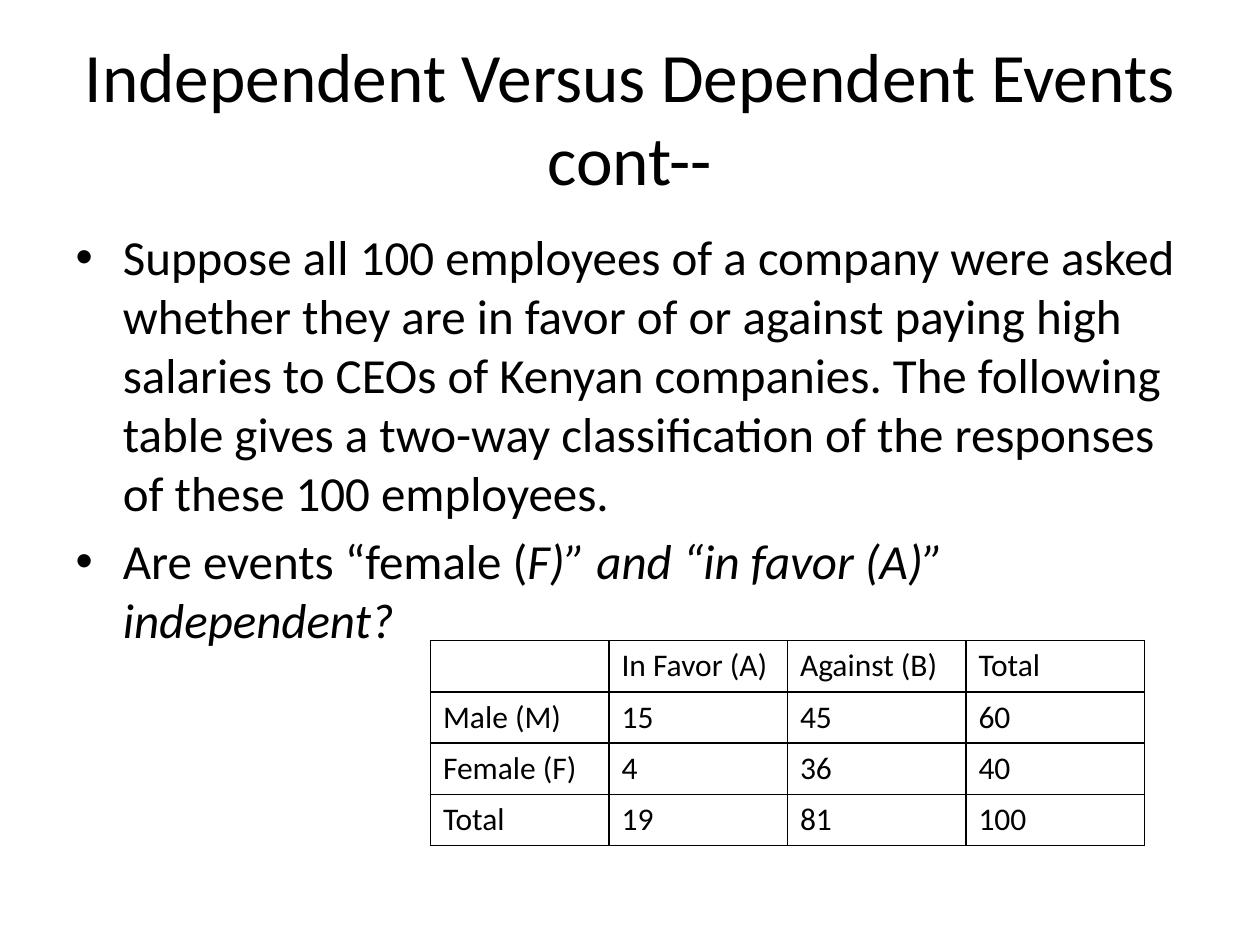
from pptx import Presentation
from pptx import util as u
from pptx.dml.color import RGBColor
from pptx.enum import text
from pptx.oxml import parse_xml
from pptx.oxml.ns import nsdecls

# Content: body paragraphs are lists of (text, italic) runs
TITLE = "Independent Versus Dependent Events cont--"
BODY = [
    [("Suppose all 100 employees of a company were asked whether they are in "
      "favor of or against paying high salaries to CEOs of Kenyan companies. "
      "The following table gives a two-way classification of the responses "
      "of these 100 employees.", False)],
    [("Are events “female (", False),
     ("F)” and “in favor (A)” independent?", True)],
]
RESPONSES = [
    ["", "In Favor (A)", "Against (B)", "Total"],
    ["Male (M)", "15", "45", "60"],
    ["Female (F)", "4", "36", "40"],
    ["Total", "19", "81", "100"],
]

THEME = {"font": "Calibri", "ink": "000000",
         "title": 39.6, "body": 28, "table": 18, "border": 1}

# Layout in points
SLIDE_W, SLIDE_H = 720, 540
TITLE_BOX = (36, 21.6, 648, 90)
BODY_BOX = (36, 126, 648, 356.4)
TABLE_LEFT, TABLE_TOP = 246, 366
COL_W, ROW_H = 102, 29.3


def place(sp, box):
    sp.left, sp.top, sp.width, sp.height = map(u.Pt, box)


def style(r, size, italic=None):
    r.font.name = THEME["font"]
    r.font.size = u.Pt(THEME[size])
    r.font.color.rgb = RGBColor.from_string(THEME["ink"])
    r.font.italic = italic


def add_borders(cell):
    tc_pr = cell._tc.get_or_add_tcPr()
    for i, side in enumerate(("lnL", "lnR", "lnT", "lnB")):
        tc_pr.insert(i, parse_xml(
            f'<a:{side} {nsdecls("a")} w="{u.Pt(THEME["border"])}"><a:solidFill>'
            f'<a:srgbClr val="{THEME["ink"]}"/></a:solidFill></a:{side}>'))


prs = Presentation()
prs.slide_width, prs.slide_height = u.Pt(SLIDE_W), u.Pt(SLIDE_H)
s = prs.slides.add_slide(prs.slide_layouts[1])

# Title
title = s.shapes.title
place(title, TITLE_BOX)
tf = title.text_frame
tf.text = TITLE
tf.auto_size = text.MSO_AUTO_SIZE.NONE
tf.vertical_anchor = text.MSO_ANCHOR.MIDDLE
style(tf.paragraphs[0].runs[0], "title")

# Bulleted body
body = s.placeholders[1]
place(body, BODY_BOX)
tf = body.text_frame
tf.auto_size = text.MSO_AUTO_SIZE.NONE
for i, runs in enumerate(BODY):
    p = tf.paragraphs[0] if i == 0 else tf.add_paragraph()
    for words, italic in runs:
        r = p.add_run()
        r.text = words
        style(r, "body", italic)

# Two-way table
n_rows, n_cols = len(RESPONSES), len(RESPONSES[0])
table = s.shapes.add_table(
    n_rows, n_cols, u.Pt(TABLE_LEFT), u.Pt(TABLE_TOP),
    u.Pt(n_cols * COL_W), u.Pt(n_rows * ROW_H)).table
table.first_row = table.horz_banding = False
for i, row in enumerate(RESPONSES):
    for j, value in enumerate(row):
        cell = table.cell(i, j)
        cell.text = value
        cell.fill.background()
        add_borders(cell)
        for r in cell.text_frame.paragraphs[0].runs:
            style(r, "table")

prs.save("out.pptx")
